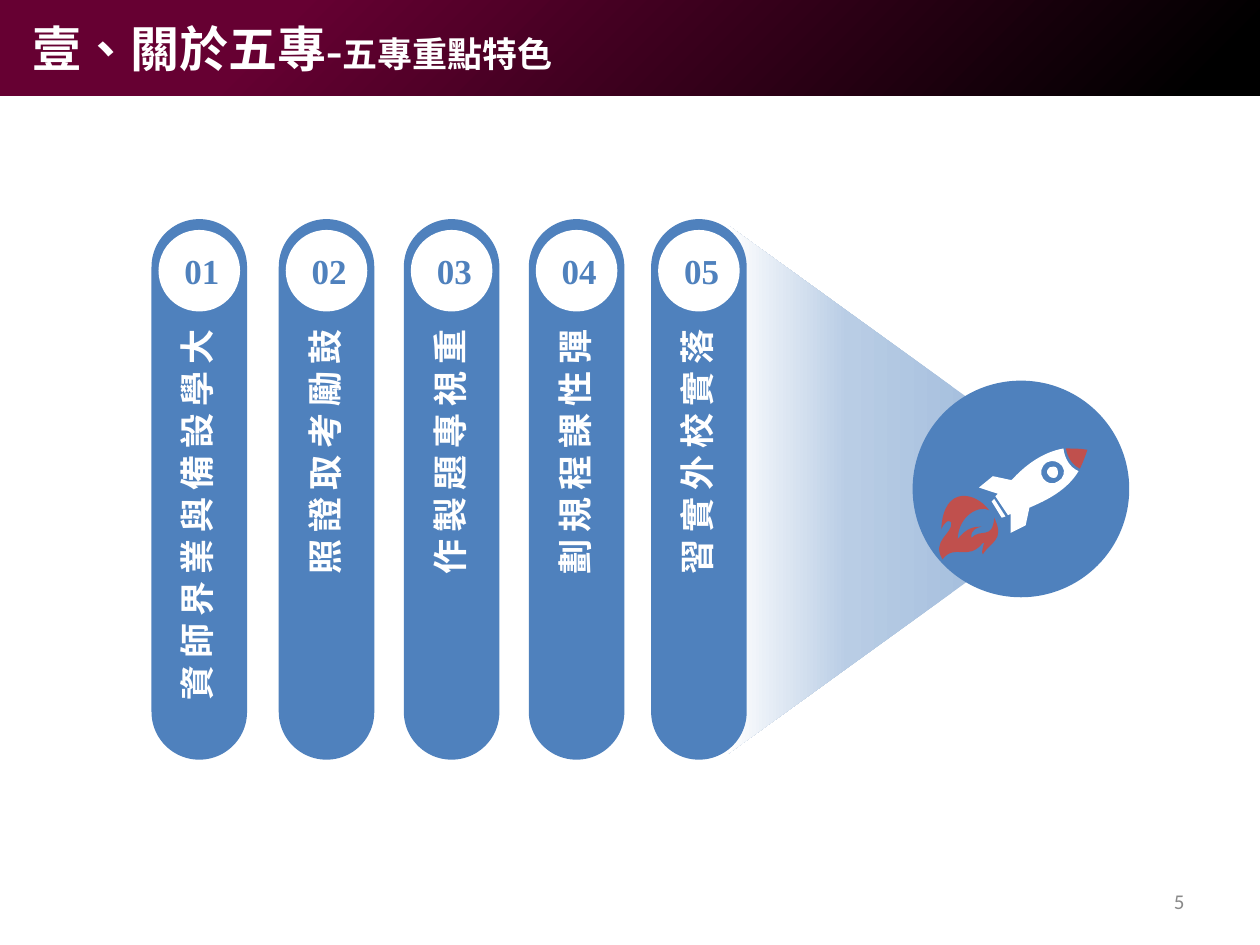
import math

from lxml import etree
from pptx import Presentation
from pptx import util as u
from pptx.dml import color
from pptx.enum import shapes, text
from pptx.oxml import ns

Pt = u.Pt
Kind = shapes.MSO_SHAPE
Align = text.PP_ALIGN
HUES = {"wine": "660032", "black": "000000", "blue": "4F81BD", "white": "FFFFFF",
        "red": "C0504D", "gray": "898989", "mist": "A7C0DE", "pale": "B9CDE5"}
SERIF = "Times New Roman"
BARS = [(86.6, "大學設備與業界師資", 232.6), (159.3, "鼓勵考取證照", 159.8),
        (230.8, "重視專題製作", 159.8), (302.2, "彈性課程規劃", 159.8),
        (372.1, "落實校外實習", 159.8)]
GRID = 0.72
TILT = 56.9
BODY = [
    [(789, 396), (798, 410), (797, 410, 796, 410, 795, 411), (787, 398)],
    [(839, 372), (840, 375, 840, 377, 838, 379), (836, 380, 833, 379, 832, 377),
     (830, 375, 831, 373, 833, 371), (835, 370, 838, 370, 839, 372)],
    [(843, 370), (840, 366, 835, 365, 831, 367), (826, 370, 825, 376, 828, 380),
     (831, 384, 836, 385, 840, 382), (844, 380, 846, 374, 843, 370)],
    [(844, 356), (845, 364, 849, 371, 856, 374), (847, 389, 831, 397, 817, 403),
     (814, 417), (802, 423), (802, 408), (800, 409), (790, 394),
     (791, 393, 791, 393, 792, 392), (777, 387), (788, 378), (802, 381), (802, 381),
     (803, 381), (813, 370, 827, 359, 844, 356)],
]
NOSE = [[(863, 357), (861, 363, 859, 368, 857, 372), (851, 369, 847, 363, 846, 356),
         (852, 356, 857, 356, 863, 357)]]
FLAME = [[(785, 405), (778, 401, 761, 408, 760, 428), (767, 419, 773, 418, 779, 418),
          (776, 419, 770, 420, 771, 427), (778, 419, 788, 429, 789, 411),
          (798, 429, 786, 430, 780, 440), (778, 437, 783, 428, 780, 431),
          (768, 446, 758, 431, 748, 444), (739, 429, 756, 424, 755, 415),
          (754, 413, 751, 412, 747, 420), (749, 384, 775, 391, 785, 405)]]


def tint(name):
    return color.RGBColor.from_string(HUES[name])


def paint(item, hue):
    item.fill.solid()
    item.fill.fore_color.rgb = tint(hue)
    item.line.fill.background()
    item.shadow.inherit = False


def blend(item, stops, angle):
    paint(item, stops[0][1])
    item.fill.gradient()
    item.fill.gradient_angle = 360 - angle
    ramp = next(item._element.iter(ns.qn("a:gsLst")))
    for old in list(ramp):
        ramp.remove(old)
    for place, hue in stops:
        stop = etree.SubElement(ramp, ns.qn("a:gs"), pos=str(place * 1000))
        etree.SubElement(stop, ns.qn("a:srgbClr"), val=HUES[hue])


def block(slide, kind, box, hue="blue"):
    item = slide.shapes.add_shape(kind, *map(Pt, box))
    paint(item, hue)
    return item


def label(slide, words, box, size=20, font=SERIF, hue="white", bold=True,
          align=Align.CENTER, anchor=text.MSO_ANCHOR.TOP, grow=True, turn=False):
    item = slide.shapes.add_textbox(*map(Pt, box))
    frame = item.text_frame
    frame.word_wrap = True
    frame.vertical_anchor = anchor
    if grow:
        frame.auto_size = text.MSO_AUTO_SIZE.SHAPE_TO_FIT_TEXT
    if turn:
        item.rotation = 270
        frame._txBody.bodyPr.set("vert", "eaVert")
    para = frame.paragraphs[0]
    para.alignment = align
    runs = [(words, size)] if isinstance(words, str) else words
    for part, high in runs:
        run = para.add_run()
        run.text = part
        run.font.size = Pt(high)
        run.font.name = font
        run.font.bold = bold
        run.font.color.rgb = tint(hue)
        run._r.get_or_add_rPr().set("lang", "zh-TW")


def curve(slide, loops, box, hue):
    left, top, wide, high = (side * GRID for side in box)
    cos, sin = math.cos(math.radians(TILT)), math.sin(math.radians(TILT))

    def local(x, y):
        dx, dy = x * GRID - left - wide / 2, y * GRID - top - high / 2
        return (Pt(wide / 2 + dx * cos + dy * sin),
                Pt(high / 2 - dx * sin + dy * cos))

    pen = slide.shapes.build_freeform()
    pen.add_line_segments([(Pt(wide), 0), (Pt(wide), Pt(high))])
    item = pen.convert_to_shape()
    item.left, item.top, item.width, item.height = map(Pt, (left, top, wide, high))
    item.rotation = TILT
    paint(item, hue)
    track = next(item._element.iter(ns.qn("a:path")))
    track.set("w", str(Pt(wide)))
    track.set("h", str(Pt(high)))
    for old in list(track):
        track.remove(old)
    for loop in loops:
        for count, piece in enumerate(loop):
            tag = "cubicBezTo" if len(piece) == 6 else "lnTo" if count else "moveTo"
            node = etree.SubElement(track, ns.qn("a:" + tag))
            for spot in zip(piece[::2], piece[1::2]):
                x, y = local(*spot)
                etree.SubElement(node, ns.qn("a:pt"), x=str(x), y=str(y))
        etree.SubElement(track, ns.qn("a:close"))


def main():
    deck = Presentation()
    deck.slide_width, deck.slide_height = Pt(720), Pt(540)
    slide = deck.slides.add_slide(deck.slide_layouts[6])

    head = block(slide, Kind.RECTANGLE, (0, 0, 720, 54.7))
    blend(head, [(5, "wine"), (22, "wine"), (95, "black")], 45)
    beam = block(slide, Kind.TRAPEZOID, (333.4, 211.7, 301.7, 136.1))
    beam.adjustments[0] = 0.72
    beam.rotation = 90
    blend(beam, [(0, "mist"), (50, "pale"), (100, "white")], 90)

    for left, _, _ in BARS:
        bar = block(slide, Kind.ROUNDED_RECTANGLE, (left, 125.2, 54.6, 308.9))
        bar.adjustments[0] = 0.5
    block(slide, Kind.OVAL, (521.5, 217.5, 123.8, 123.8))
    curve(slide, BODY, (796, 349, 47, 73), "white")
    curve(slide, NOSE, (846, 353, 19, 16), "red")
    curve(slide, FLAME, (726, 386, 67, 53), "red")

    for left, _, _ in BARS:
        block(slide, Kind.OVAL, (left + 4, 131.4, 46.6, 46.6), "white")
    for count, (left, _, _) in enumerate(BARS, 1):
        label(slide, f"{count:02}", (left + 1.8, 139, 54, 31.5), hue="blue")
    for left, words, long in BARS:
        label(slide, words, (left + 24.7 - long / 2, 168 + long / 2, long, 31),
              align=Align.RIGHT, turn=True)

    label(slide, [("壹、關於五專-", 28), ("五專重點特色", 20)], (11.5, 7.2, 609.1, 41),
          align=Align.JUSTIFY)
    label(slide, "5", (516.2, 500.4, 167.8, 28.8), size=12, font="Calibri", hue="gray",
          bold=False, align=Align.RIGHT, anchor=text.MSO_ANCHOR.MIDDLE, grow=False)
    deck.save("out.pptx")


if __name__ == "__main__":
    main()
